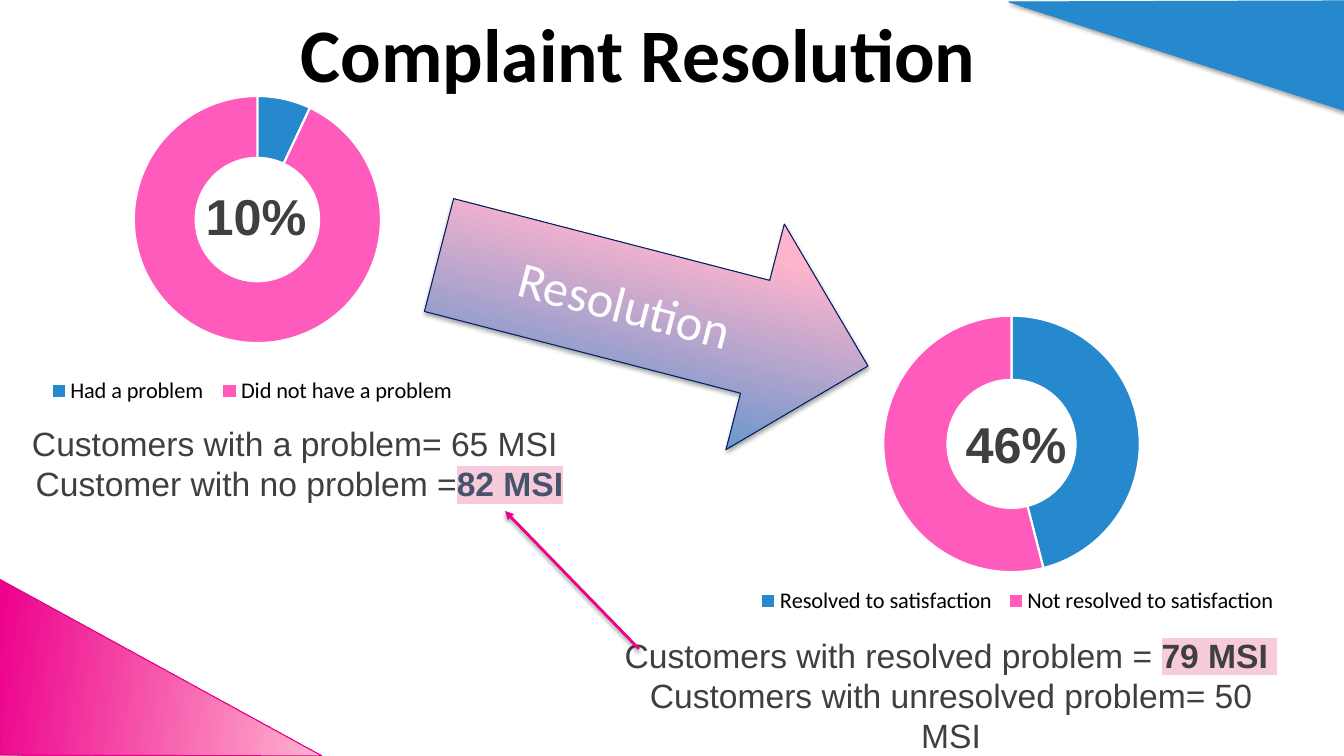
from lxml import etree
from pptx import Presentation
from pptx.chart.data import CategoryChartData
from pptx.dml.color import RGBColor
from pptx.enum.chart import XL_CHART_TYPE, XL_LEGEND_POSITION
from pptx.enum.shapes import MSO_CONNECTOR, MSO_SHAPE
from pptx.enum.text import MSO_ANCHOR, MSO_AUTO_SIZE, PP_ALIGN
from pptx.oxml import parse_xml
from pptx.oxml.ns import nsdecls, qn
from pptx.util import Pt

DOUGHNUT = XL_CHART_TYPE.DOUGHNUT
BOTTOM = XL_LEGEND_POSITION.BOTTOM
STRAIGHT = MSO_CONNECTOR.STRAIGHT
RIGHT_ARROW = MSO_SHAPE.RIGHT_ARROW
MIDDLE = MSO_ANCHOR.MIDDLE
GROW = MSO_AUTO_SIZE.SHAPE_TO_FIT_TEXT
LEFT, CENTER = PP_ALIGN.LEFT, PP_ALIGN.CENTER

THEME = {
    "blue": "2688CD", "pink": "FF5BBC", "magenta": "ED008C", "edge": "E80089",
    "blush": "FFB4CD", "navy": "002060", "slate": "45546D", "marker": "F8CBDB",
    "gray": "3F3F3F", "black": "000000", "white": "FFFFFF",
    "heading": "Calibri", "body": "Arial",
    "title": 54, "figure": 36, "text": 24, "legend": 16, "chart": 10,
}
COLOR = {name: RGBColor.from_string(value) for name, value in THEME.items()
         if isinstance(value, str) and len(value) == 6}
EMU_PER_PX = 914400 / 100.8


def px(*lengths):
    return [round(length * EMU_PER_PX) for length in lengths]


def write(frame, paragraphs, size="text", font="body", color="gray",
          bold=False, align=CENTER):
    """Each paragraph is a list of (text, overrides) runs."""
    frame.word_wrap = True
    frame.vertical_anchor = MIDDLE
    for index, runs in enumerate(paragraphs):
        paragraph = frame.add_paragraph() if index else frame.paragraphs[0]
        paragraph.alignment = align
        for text, overrides in runs:
            run = paragraph.add_run()
            run.text = text
            run.font.size = Pt(THEME[size])
            run.font.name = THEME[font]
            run.font.bold = overrides.get("bold", bold)
            run.font.color.rgb = COLOR[overrides.get("color", color)]
            if "highlight" in overrides:
                marker = parse_xml(
                    f'<a:highlight {nsdecls("a")}><a:srgbClr '
                    f'val="{THEME[overrides["highlight"]]}"/></a:highlight>')
                run.font._element.find(qn("a:solidFill")).addnext(marker)


prs = Presentation()
prs.slide_width, prs.slide_height = px(1344, 756)
slide = prs.slides.add_slide(prs.slide_layouts[6])
shapes = slide.shapes

# Corner triangles
corners = []
for start, *others in (
    [(1344, 1), (1346, 111), (1009, 2)],
    [(-1, 579), (322, 756), (0, 755)],
):
    outline = shapes.build_freeform(*start, scale=EMU_PER_PX)
    outline.add_line_segments(others, close=True)
    corners.append(outline.convert_to_shape())
top_corner, bottom_corner = corners
top_corner.fill.solid()
top_corner.fill.fore_color.rgb = COLOR["blue"]

# Doughnut charts, each with its figure in the hole
for box, figure_box, figure, plot_place, legend_place, shares in (
    ((-20, 89, 544, 353), (166, 179, 180, 72), "10%",
     (0.2, 0.02, 0.62, 0.7), (0.11, 0.81, 0.78, 0.09),
     {"Had a problem": 7, "Did not have a problem": 93}),
    ((728, 302, 597, 342), (920, 407, 192, 72), "46%",
     (0.18, 0.04, 0.59, 0.75), (0.04, 0.83, 0.89, 0.09),
     {"Resolved to satisfaction": 46, "Not resolved to satisfaction": 54}),
):
    data = CategoryChartData()
    data.categories = list(shares)
    data.add_series("Series 1", list(shares.values()))
    chart = shapes.add_chart(DOUGHNUT, *px(*box), data).chart
    chart.has_title = False
    chart.has_legend = True
    chart.legend.position = BOTTOM
    chart.legend.include_in_layout = False
    for font, size in ((chart.font, "chart"), (chart.legend.font, "legend")):
        font.size = Pt(THEME[size])
        font.name = THEME["heading"]
        font.color.rgb = COLOR["black"]
    rings = chart.plots[0]
    rings.vary_by_categories = True
    for index, color in enumerate(("blue", "pink")):
        slice_format = rings.series[0].points[index].format
        slice_format.fill.solid()
        slice_format.fill.fore_color.rgb = COLOR[color]
        slice_format.line.color.rgb = COLOR["white"]
        slice_format.line.width = Pt(1.5)

    # Hole size, and places of the ring and its legend
    chart_root = chart._chartSpace
    chart_root.find(".//" + qn("c:holeSize")).set("val", "75")
    for part, position, target, place in (
        ("c:plotArea", 0, {"layoutTarget": "inner"}, plot_place),
        ("c:legend", 1, {}, legend_place),
    ):
        area = chart_root.find(".//" + qn(part))
        for old_layout in area.findall(qn("c:layout")):
            area.remove(old_layout)
        layout = etree.Element(qn("c:layout"))
        manual = etree.SubElement(layout, qn("c:manualLayout"))
        settings = {**target, "xMode": "edge", "yMode": "edge",
                    **dict(zip("xywh", place))}
        for tag, value in settings.items():
            etree.SubElement(manual, qn("c:" + tag)).set("val", str(value))
        area.insert(position, layout)

    share = shapes.add_textbox(*px(*figure_box)).text_frame
    write(share, [[(figure, {})]], size="figure", bold=True)

# Satisfaction scores
for box, lines in (
    ((20, 417, 559, 92),
     [[("Customers with a problem= 65 MSI ", {})],
      [("Customer with no problem =", {}),
       ("82 MSI", {"bold": True, "color": "slate", "highlight": "marker"})]]),
    ((610, 649, 682, 92),
     [[("Customers with resolved problem = ", {}),
       ("79 MSI ", {"bold": True, "highlight": "marker"})],
      [("Customers with unresolved problem= 50 MSI", {})]]),
):
    scores = shapes.add_textbox(*px(*box)).text_frame
    write(scores, lines)
    scores.auto_size = GROW

# Title
title = shapes.add_textbox(*px(291, 13, 718, 78)).text_frame
write(title, [[("Complaint Resolution", {})]], size="title", font="heading",
      color="black", bold=True, align=LEFT)

# Resolution arrow
resolution = shapes.add_shape(RIGHT_ARROW, *px(432, 194, 443, 233))
resolution.rotation = 14.5
write(resolution.text_frame, [[("Resolution", {})]], size="figure",
      font="heading", color="white")

# Gradients
for shape, angle, stops in (
    (bottom_corner, 353, (("magenta", 0), ("blush", 1))),
    (resolution, 90, (("blue", 0.03), ("blush", 0.68))),
):
    shape.fill.gradient()
    shape.fill.gradient_angle = angle
    for stop, (color, position) in zip(shape.fill.gradient_stops, stops):
        stop.color.rgb = COLOR[color]
        stop.position = position

# Link from the resolved score to the no-problem score
score_link = shapes.add_connector(STRAIGHT, *px(639, 649, 505, 511))

# Lines and soft shadows
for shape, color, width, opacity in (
    (top_corner, "blue", 0.75, 35),
    (bottom_corner, "edge", 0.75, 35),
    (resolution, "navy", 0.75, 35),
    (score_link, "magenta", 2, 38),
):
    shape.line.color.rgb = COLOR[color]
    shape.line.width = Pt(width)
    shape._element.spPr.append(parse_xml(
        f'<a:effectLst {nsdecls("a")}><a:outerShdw blurRad="{Pt(3.1)}" '
        f'dist="{Pt(1.8)}" dir="5400000" rotWithShape="0">'
        f'<a:srgbClr val="{THEME["black"]}"><a:alpha val="{opacity * 1000}"/>'
        '</a:srgbClr></a:outerShdw></a:effectLst>'))
etree.SubElement(score_link.line._get_or_add_ln(), qn("a:tailEnd")).set(
    "type", "triangle")

prs.save("out.pptx")
